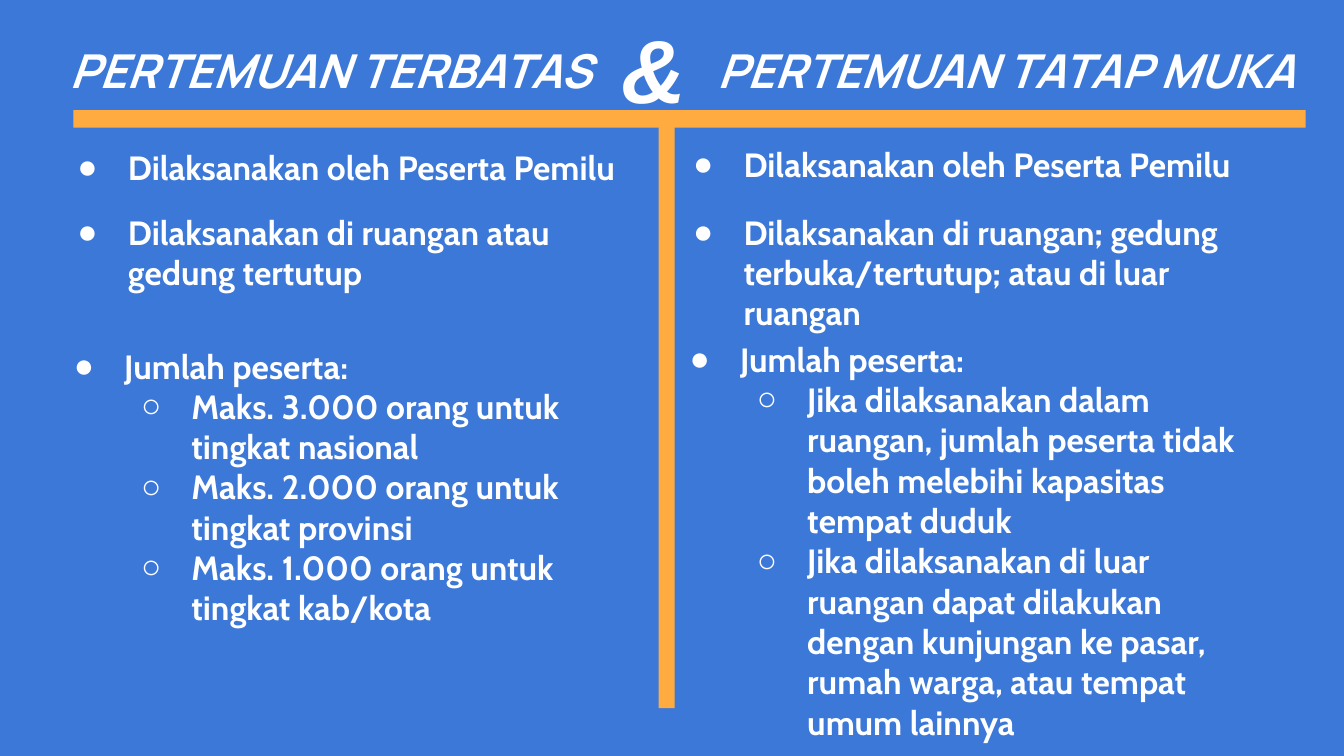
import lxml.etree
import pptx
import pptx.dml.color
import pptx.enum.shapes
import pptx.enum.text
import pptx.oxml.ns
import pptx.util

BLUE = pptx.dml.color.RGBColor(0x3C, 0x78, 0xD8)
ORANGE = pptx.dml.color.RGBColor(0xFF, 0xAB, 0x40)
WHITE = pptx.dml.color.RGBColor(0xFF, 0xFF, 0xFF)

CELL = 0.1  # inches; the slide is a grid of 100 columns
BULLETS = "●○"
FIRST_INDENT, INDENT_STEP, HANGING = 5, 5, 3.75
COLUMN_WIDTH, ITEM_HEIGHT = 45.5, 5.8


def cells(count):
    return pptx.util.Inches(count * CELL)


def write_text(para, text, *, font, size, italic=False):
    span = para.add_run()
    span.text = text
    span.font.name = font
    span.font.size = pptx.util.Pt(size)
    span.font.bold = True
    span.font.italic = italic
    span.font.color.rgb = WHITE


def add_bullet(para, level):
    """Give the paragraph a white bullet with a hanging indent."""
    para.level = level
    properties = para._p.get_or_add_pPr()
    properties.set("marL", str(cells(FIRST_INDENT + level * INDENT_STEP)))
    properties.set("indent", str(-cells(HANGING)))
    qualified = pptx.oxml.ns.qn
    colour = lxml.etree.SubElement(properties, qualified("a:buClr"))
    lxml.etree.SubElement(colour, qualified("a:srgbClr"), val=str(WHITE))
    lxml.etree.SubElement(properties, qualified("a:buFont"), typeface="Arial")
    lxml.etree.SubElement(properties, qualified("a:buChar"), char=BULLETS[level])


class SlideBuilder:
    """Draws on one slide; every place and size is in grid cells."""

    def __init__(self, deck):
        self.slide = deck.slides.add_slide(deck.slide_layouts[6])
        self.slide.background.fill.solid()
        self.slide.background.fill.fore_color.rgb = BLUE

    def bar(self, left, top, width, height):
        bar = self.slide.shapes.add_shape(
            pptx.enum.shapes.MSO_SHAPE.RECTANGLE,
            cells(left), cells(top), cells(width), cells(height))
        bar.shadow.inherit = False
        bar.fill.solid()
        bar.fill.fore_color.rgb = ORANGE
        bar.line.fill.background()
        return bar

    def crossbar(self, left, top, width, height):
        """Lay an upright bar on its side, turned about its centre."""
        shift = (width - height) / 2
        bar = self.bar(left + shift, top - shift, height, width)
        bar.rotation = 90

    def text_frame(self, left, top, width, height):
        box = self.slide.shapes.add_textbox(
            cells(left), cells(top), cells(width), cells(height))
        frame = box.text_frame
        frame.word_wrap = True
        frame.vertical_anchor = pptx.enum.text.MSO_ANCHOR.TOP
        frame.margin_left = frame.margin_right = cells(1)
        frame.margin_top = frame.margin_bottom = cells(1)
        return frame

    def heading(self, text, left, top, width, *, font="Manrope", size=25):
        frame = self.text_frame(left, top, width, 9.4)
        write_text(frame.paragraphs[0], text, font=font, size=size, italic=True)

    def bullet_list(self, left, top, item, details=()):
        """Write one item with its details as second-level bullets."""
        frame = self.text_frame(left, top, COLUMN_WIDTH, ITEM_HEIGHT)
        for index, text in enumerate((item, *details)):
            para = frame.add_paragraph() if index else frame.paragraphs[0]
            add_bullet(para, level=min(index, 1))
            write_text(para, text, font="Cabin", size=18)


LISTS = [
    (3.53, 9.9, "Dilaksanakan oleh Peserta Pemilu"),
    (49.34, 9.7, "Dilaksanakan oleh Peserta Pemilu"),
    (49.34, 14.74, "Dilaksanakan di ruangan; gedung terbuka/tertutup; "
                   "atau di luar ruangan"),
    (3.53, 14.74, "Dilaksanakan di ruangan atau gedung tertutup"),
    (3.26, 24.7, "Jumlah peserta:", [
        f"Maks. {limit} orang untuk tingkat {area}"
        for limit, area in [("3.000", "nasional"), ("2.000", "provinsi"),
                            ("1.000", "kab/kota")]]),
    (49.08, 24.2, "Jumlah peserta:", [
        "Jika dilaksanakan dalam ruangan, jumlah peserta tidak boleh "
        "melebihi kapasitas tempat duduk",
        "Jika dilaksanakan di luar ruangan dapat dilakukan dengan kunjungan "
        "ke pasar, rumah warga, atau tempat umum lainnya"]),
]


def main():
    deck = pptx.Presentation()
    deck.slide_width = pptx.util.Inches(10)
    deck.slide_height = deck.slide_width * 9 // 16
    builder = SlideBuilder(deck)
    builder.bar(49, 9.3, 1.2, 43.4)
    builder.heading("PERTEMUAN TERBATAS", 4.2, 2.1, 42.7)
    builder.heading("PERTEMUAN TATAP MUKA", 52.4, 2.1, 48.3)
    builder.crossbar(5.45, 8.2, 91.7, 1.3)
    builder.heading("&", 45.25, 0.05, 7.5, font="Arial", size=48)
    for entry in LISTS:
        builder.bullet_list(*entry)
    deck.save("out.pptx")


if __name__ == "__main__":
    main()
